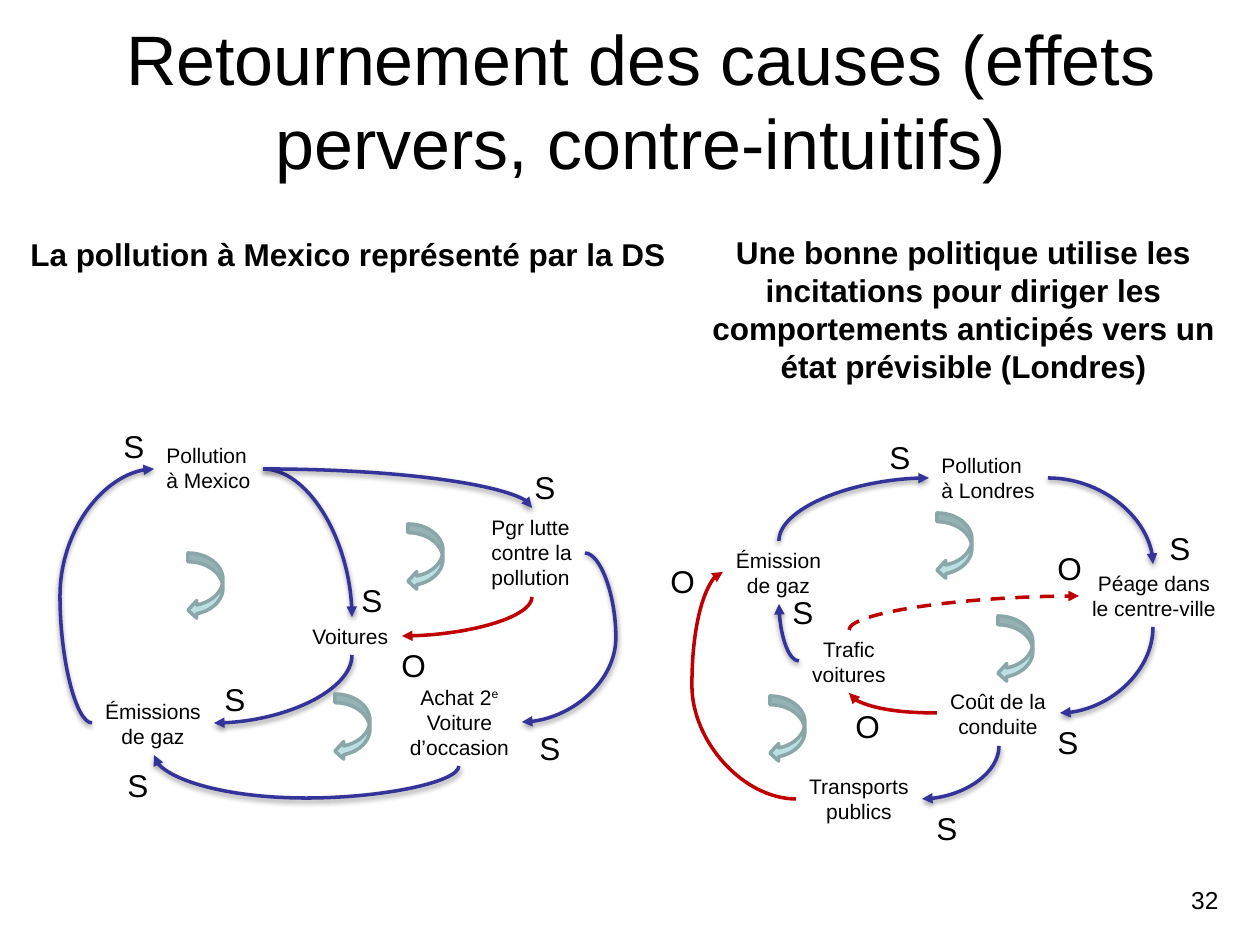
import pptx
import pptx.dml.color
import pptx.enum.dml
import pptx.enum.shapes
import pptx.enum.text
import pptx.oxml
import pptx.oxml.ns
import pptx.util

RGB = pptx.dml.color.RGBColor
BLACK = RGB(0x00, 0x00, 0x00)
BLUE = RGB(0x33, 0x33, 0x99)
RED = RGB(0xC0, 0x00, 0x00)
PALE = RGB(0xBB, 0xE0, 0xE3)
TEAL = RGB(0x8A, 0xA6, 0xA8)

ALIGN = pptx.enum.text.PP_ALIGN
LEFT, CENTER, RIGHT = ALIGN.LEFT, ALIGN.CENTER, ALIGN.RIGHT
MIDDLE = pptx.enum.text.MSO_ANCHOR.MIDDLE
SCALE = 914400 / 126
NS = pptx.oxml.ns.nsdecls("a")
NO_EFFECT = f"<a:effectLst {NS}/>"
SHADOW = (
    f'<a:effectLst {NS}><a:outerShdw blurRad="39370" dist="20320" dir="5400000" '
    'rotWithShape="0"><a:srgbClr val="000000"><a:alpha val="38000"/>'
    "</a:srgbClr></a:outerShdw></a:effectLst>"
)


def px(n):
    return pptx.util.Emu(round(n * SCALE))


def add_text(s, text, x, y, w, h, size=12, bold=False, align=LEFT, wrap=False, anchor=None):
    sp = s.shapes.add_textbox(px(x), px(y), px(w), px(h))
    tf = sp.text_frame
    tf.word_wrap = wrap
    if anchor is not None:
        tf.vertical_anchor = anchor
    for i, line in enumerate(text.split("\n")):
        p = tf.paragraphs[0] if i == 0 else tf.add_paragraph()
        p.alignment = align
        for j, part in enumerate(line.split("^")):
            if not part:
                continue
            r = p.add_run()
            r.text = part
            r.font.name = "Arial"
            r.font.size = pptx.util.Pt(size)
            r.font.bold = bold
            r.font.color.rgb = BLACK
            if j % 2:
                r.font._element.set("baseline", "30000")


def add_curve(s, start, end, vertical=False, bend=None, color=BLUE, dash=False):
    (x1, y1), (x2, y2) = start, end
    dx, dy = x2 - x1, y2 - y1
    box = (x1, y1, x2, y2)
    if vertical:
        cx, cy = (x1 + x2) / 2, (y1 + y2) / 2
        box = (cx - dy / 2, cy + dx / 2, cx + dy / 2, cy - dx / 2)
    kind = pptx.enum.shapes.MSO_CONNECTOR.CURVE
    sp = s.shapes.add_connector(kind, *map(px, box))
    sp.line.color.rgb = color
    sp.line.width = pptx.util.Pt(2)
    if dash:
        sp.line.dash_style = pptx.enum.dml.MSO_LINE.DASH
    spPr = sp._element.spPr
    qn = pptx.oxml.ns.qn
    if vertical:
        spPr.find(qn("a:xfrm")).set("rot", "5400000")
    geom = spPr.find(qn("a:prstGeom"))
    if bend is None:
        geom.set("prst", "curvedConnector2")
    else:
        ratio = (bend - y1) / dy if vertical else (bend - x1) / dx
        for old in list(geom):
            geom.remove(old)
        geom.append(pptx.oxml.parse_xml(
            f'<a:avLst {NS}><a:gd name="adj1" fmla="val {round(ratio * 100000)}"/></a:avLst>'))
    spPr.find(qn("a:ln")).append(pptx.oxml.parse_xml(f'<a:tailEnd {NS} type="triangle"/>'))
    spPr.append(pptx.oxml.parse_xml(SHADOW if color == BLUE else NO_EFFECT))


def add_loop(s, x, y):
    kind = pptx.enum.shapes.MSO_SHAPE.CURVED_LEFT_ARROW
    sp = s.shapes.add_shape(kind, px(x), px(y), px(35), px(66))
    sp.shadow.inherit = False
    sp.fill.solid()
    sp.fill.fore_color.rgb = PALE
    sp.line.color.rgb = TEAL
    sp.line.width = pptx.util.Pt(2)


def add_diagram(s, left, top, nodes, curves, loops, signs):
    for text, x, y, w, h, align in nodes:
        add_text(s, text, left + x, top + y, w, h, align=align)
    for (x1, y1), (x2, y2), fmt in curves:
        fmt = dict(fmt)
        if "bend" in fmt:
            fmt["bend"] += top if fmt.get("vertical") else left
        add_curve(s, (left + x1, top + y1), (left + x2, top + y2), **fmt)
    for x, y in loops:
        add_loop(s, left + x, top + y)
    for sign, places in signs.items():
        for x, y in places:
            add_text(s, sign, left + x, top + y, 48, 50, size=18)


def add_mexico(s, left, top):
    nodes = [
        ("Pollution\nà Mexico", 104, 36, 110, 63, LEFT),
        ("Voitures", 250, 217, 102, 38, LEFT),
        ("Émissions\nde gaz", 42, 292, 122, 63, CENTER),
        ("Pgr lutte\ncontre la\npollution", 429, 108, 107, 89, LEFT),
        ("Achat 2^e^\nVoiture\nd’occasion", 347, 278, 125, 89, CENTER),
    ]
    curves = [
        ((213, 69), (302, 217), {}),
        ((302, 255), (164, 323), dict(vertical=True)),
        ((42, 323), (104, 69), dict(bend=10)),
        ((213, 69), (482, 108), {}),
        ((482, 197), (352, 236), dict(vertical=True, color=RED)),
        ((535, 153), (472, 322), dict(bend=566)),
        ((409, 366), (104, 355), dict(vertical=True, bend=398)),
    ]
    loops = [(138, 153), (358, 124), (285, 294)]
    signs = {
        "S": [(472, 62), (299, 175), (477, 323), (162, 274), (65, 360), (61, 21)],
        "O": [(339, 240)],
    }
    add_diagram(s, left, top, nodes, curves, loops, signs)


def add_londres(s, left, top):
    nodes = [
        ("Pollution\nà Londres", 279, 46, 120, 63, LEFT),
        ("Péage dans\nle centre-ville", 429, 164, 150, 63, CENTER),
        ("Coût de la\nconduite", 287, 282, 122, 63, CENTER),
        ("Transports\npublics", 146, 367, 126, 63, CENTER),
        ("Trafic\nvoitures", 149, 230, 100, 63, CENTER),
        ("Émission\nde gaz", 73, 141, 111, 63, CENTER),
    ]
    curves = [
        ((398, 78), (503, 164), {}),
        ((503, 227), (410, 313), dict(vertical=True)),
        ((287, 313), (199, 293), dict(color=RED)),
        ((149, 261), (129, 204), {}),
        ((129, 141), (279, 78), dict(vertical=True)),
        ((349, 346), (272, 399), dict(vertical=True)),
        ((146, 399), (73, 172), dict(bend=42, color=RED)),
        ((199, 230), (429, 196), dict(vertical=True, color=RED, dash=True)),
    ]
    loops = [(287, 113), (348, 216), (120, 296)]
    signs = {
        "S": [(227, 32), (130, 187), (395, 317), (507, 123), (274, 403)],
        "O": [(8, 156), (193, 301), (395, 143)],
    }
    add_diagram(s, left, top, nodes, curves, loops, signs)


def main():
    prs = pptx.Presentation()
    prs.slide_width, prs.slide_height = px(1260), px(945)
    s = prs.slides.add_slide(prs.slide_layouts[6])
    add_text(s, "Retournement des causes (effets pervers, contre-intuitifs)",
             35, 20, 1211, 158, size=40, align=CENTER, wrap=True, anchor=MIDDLE)
    add_text(s, "La pollution à Mexico représenté par la DS",
             18, 229, 667, 50, size=18, bold=True)
    add_text(s, "Une bonne politique utilise les incitations pour diriger les "
             "comportements anticipés vers un état prévisible (Londres)",
             695, 227, 537, 165, size=18, bold=True, align=CENTER, wrap=True)
    add_mexico(s, 50, 400)
    add_londres(s, 650, 400)
    add_text(s, "32", 1028, 879, 203, 38, size=14, align=RIGHT, wrap=True)
    prs.save("out.pptx")


if __name__ == "__main__":
    main()
